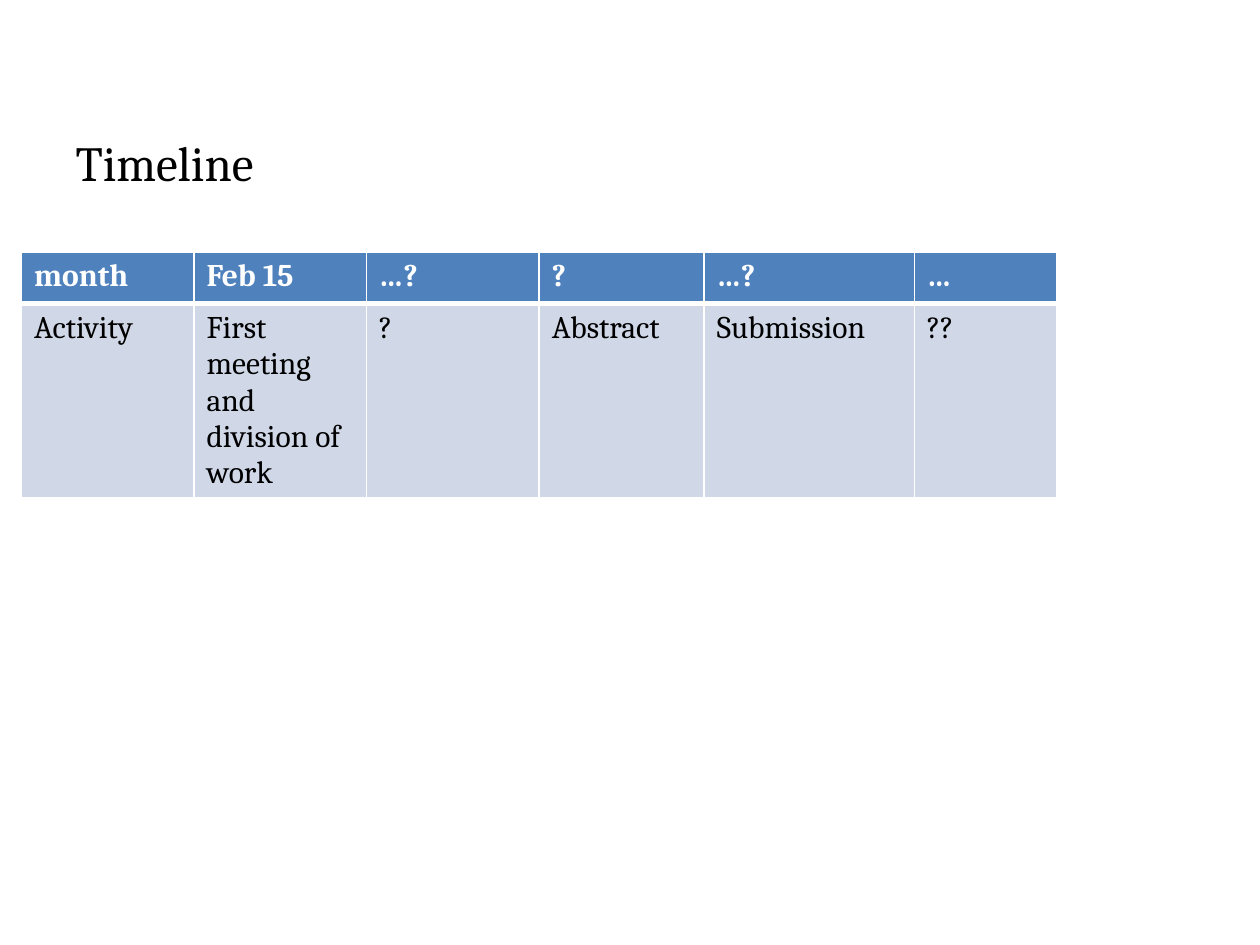
from lxml.etree import SubElement
from pptx import Presentation
from pptx.dml.color import RGBColor
from pptx.enum.text import MSO_ANCHOR, PP_ALIGN
from pptx.oxml.ns import qn
from pptx.util import Inches, Pt

FONT = "Cambria"
BLACK = RGBColor(0x00, 0x00, 0x00)
WHITE = RGBColor(0xFF, 0xFF, 0xFF)
BLUE = RGBColor(0x4F, 0x81, 0xBD)
PALE_BLUE = RGBColor(0xD0, 0xD8, 0xE8)

TITLE = "Timeline"
MONTHS = ["month", "Feb 15", "…?", "?", "…?", "…"]
ACTIVITIES = ["Activity", "First meeting and division of work", "?",
              "Abstract", "Submission", "??"]
COL_WIDTHS = [1.37, 1.37, 1.37, 1.31, 1.67, 1.13]
ROW_HEIGHT = 0.41
# cell texts, fill, text colour, bold, top and bottom border widths in points
ROWS = [
    (MONTHS, BLUE, WHITE, True, 1, 3),
    (ACTIVITIES, PALE_BLUE, BLACK, False, 3, 1),
]


def add_run(p, text, size, color, bold=False):
    r = p.add_run()
    r.text = text
    r.font.name = FONT
    r.font.size = Pt(size)
    r.font.bold = bold
    r.font.color.rgb = color


def set_borders(cell, top, bottom):
    """Give the cell white borders; call before setting its fill."""
    tc_pr = cell._tc.get_or_add_tcPr()
    for side, width in (("L", 1), ("R", 1), ("T", top), ("B", bottom)):
        ln = SubElement(tc_pr, qn(f"a:ln{side}"), w=str(Pt(width)))
        fill = SubElement(ln, qn("a:solidFill"))
        SubElement(fill, qn("a:srgbClr"), val=str(WHITE))


prs = Presentation()
prs.slide_width, prs.slide_height = Inches(10), Inches(7.5)
s = prs.slides.add_slide(prs.slide_layouts[5])

title = s.shapes.title
title.left, title.top = Inches(0.5), Inches(1)
title.width, title.height = Inches(9), Inches(1)
tf = title.text_frame
tf.vertical_anchor = MSO_ANCHOR.TOP
p = tf.paragraphs[0]
p.alignment = PP_ALIGN.LEFT
add_run(p, TITLE, 28, BLACK)

table = s.shapes.add_table(
    len(ROWS), len(COL_WIDTHS), Inches(0.17), Inches(2),
    Inches(sum(COL_WIDTHS)), Inches(ROW_HEIGHT * len(ROWS))).table
for column, width in zip(table.columns, COL_WIDTHS):
    column.width = Inches(width)

for row, (texts, fill, color, bold, top, bottom) in zip(table.rows, ROWS):
    row.height = Inches(ROW_HEIGHT)
    for cell, text in zip(row.cells, texts):
        set_borders(cell, top, bottom)
        cell.fill.solid()
        cell.fill.fore_color.rgb = fill
        add_run(cell.text_frame.paragraphs[0], text, 18, color, bold)

prs.save("out.pptx")
